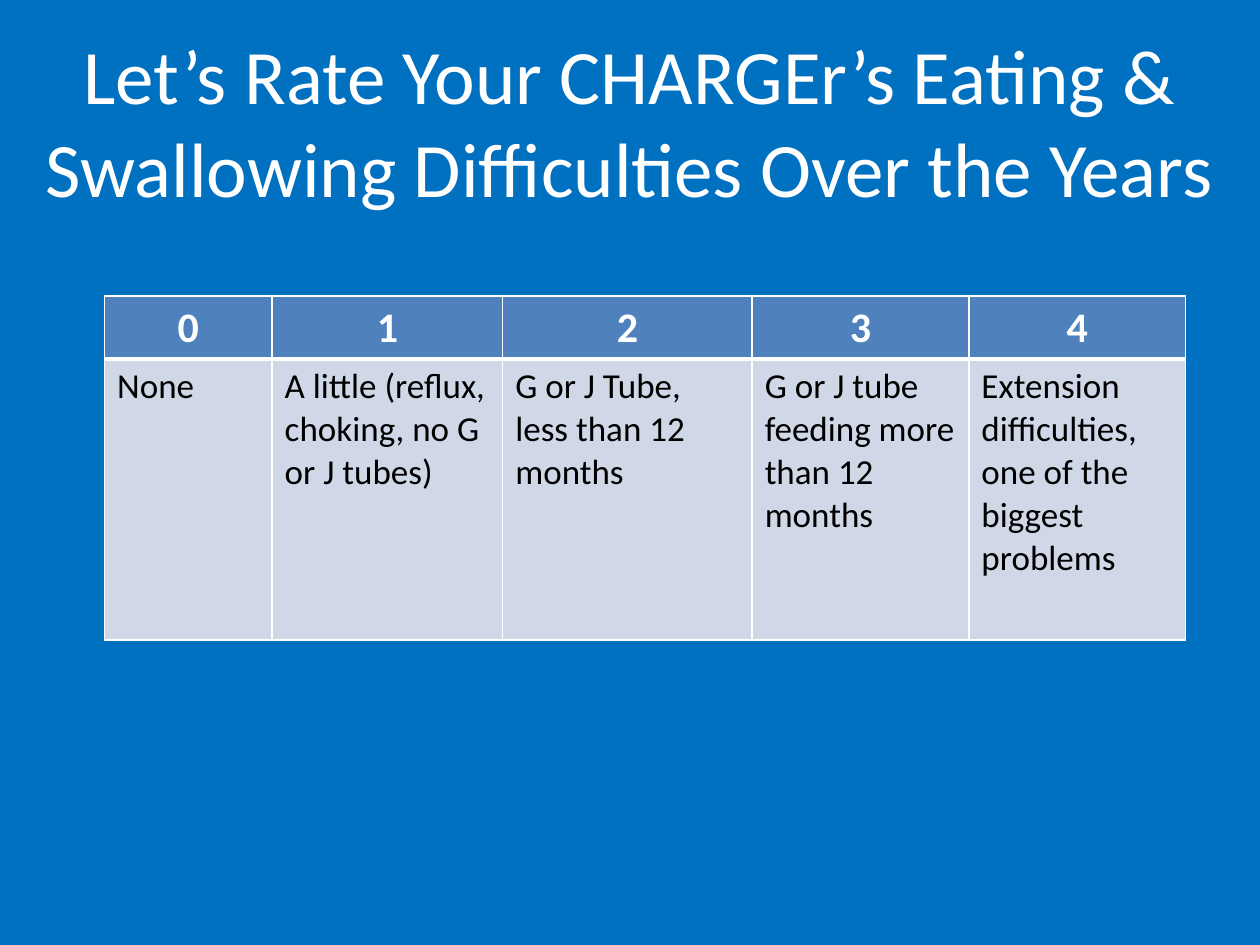
import lxml.etree
import pptx
import pptx.dml.color
import pptx.enum.text
import pptx.oxml.ns
import pptx.util

Inches = pptx.util.Inches
RGBColor = pptx.dml.color.RGBColor
ALIGN = pptx.enum.text.PP_ALIGN

BLUE = RGBColor(0x00, 0x70, 0xC0)
HEADER_BLUE = RGBColor(0x4F, 0x81, 0xBD)
PALE_BLUE = RGBColor(0xD0, 0xD8, 0xE8)
WHITE = RGBColor(0xFF, 0xFF, 0xFF)
BLACK = RGBColor(0x00, 0x00, 0x00)

TITLE = "Let’s Rate Your CHARGEr’s Eating & Swallowing Difficulties Over the Years"
RATINGS = [
    ("0", "None", 1.33),
    ("1", "A little (reflux, choking, no G or J tubes)", 1.83),
    ("2", "G or J Tube, less than 12 months", 1.98),
    ("3", "G or J tube feeding more than 12 months", 1.72),
    ("4", "Extension difficulties, one of the biggest problems", 1.72),
]
ROW_HEIGHTS = (0.5, 2.23)


def write_text(frame, text, size, color, bold=False, align=ALIGN.LEFT):
    """Fill a text frame with one formatted paragraph."""
    para = frame.paragraphs[0]
    para.alignment = align
    span = para.add_run()
    span.text = text
    span.font.name = "Calibri"
    span.font.size = pptx.util.Pt(size)
    span.font.bold = bold
    span.font.color.rgb = color


def add_borders(cell, **widths):
    """Draw white cell borders with the given widths in points."""
    properties = cell._tc.get_or_add_tcPr()
    for side in "LRTB":
        line = lxml.etree.SubElement(
            properties, pptx.oxml.ns.qn(f"a:ln{side}"), w=str(pptx.util.Pt(widths.get(side, 1)))
        )
        fill = lxml.etree.SubElement(line, pptx.oxml.ns.qn("a:solidFill"))
        lxml.etree.SubElement(fill, pptx.oxml.ns.qn("a:srgbClr"), val=str(WHITE))


def fill_cell(cell, color):
    """Give a cell a solid fill."""
    cell.fill.solid()
    cell.fill.fore_color.rgb = color


def add_title(page, left, top, width, height):
    """Place the centred title."""
    box = page.shapes.add_textbox(left, top, width, height)
    frame = box.text_frame
    frame.word_wrap = True
    frame.vertical_anchor = pptx.enum.text.MSO_ANCHOR.MIDDLE
    write_text(frame, TITLE, 44, WHITE, align=ALIGN.CENTER)


def add_rating_table(page, left, top, width, height):
    """Place the rating scale with its descriptions."""
    table = page.shapes.add_table(2, len(RATINGS), left, top, width, height).table
    for row, row_height in zip(table.rows, ROW_HEIGHTS):
        row.height = Inches(row_height)
    for index, (score, description, column_width) in enumerate(RATINGS):
        table.columns[index].width = Inches(column_width)
        header, body = table.cell(0, index), table.cell(1, index)
        write_text(header.text_frame, score, 24, WHITE, bold=True, align=ALIGN.CENTER)
        write_text(body.text_frame, description, 20, BLACK)
        add_borders(header, B=3)
        add_borders(body, T=3)
        fill_cell(header, HEADER_BLUE)
        fill_cell(body, PALE_BLUE)


def main():
    """Build and save the deck."""
    deck = pptx.Presentation()
    deck.slide_width, deck.slide_height = Inches(10), Inches(7.5)
    page = deck.slides.add_slide(deck.slide_layouts[6])
    page.background.fill.solid()
    page.background.fill.fore_color.rgb = BLUE
    add_title(page, Inches(0.25), Inches(0.33), Inches(9.5), Inches(1.25))
    add_rating_table(page, Inches(0.83), Inches(2.35), Inches(8.58), Inches(2.73))
    deck.save("out.pptx")


if __name__ == "__main__":
    main()
